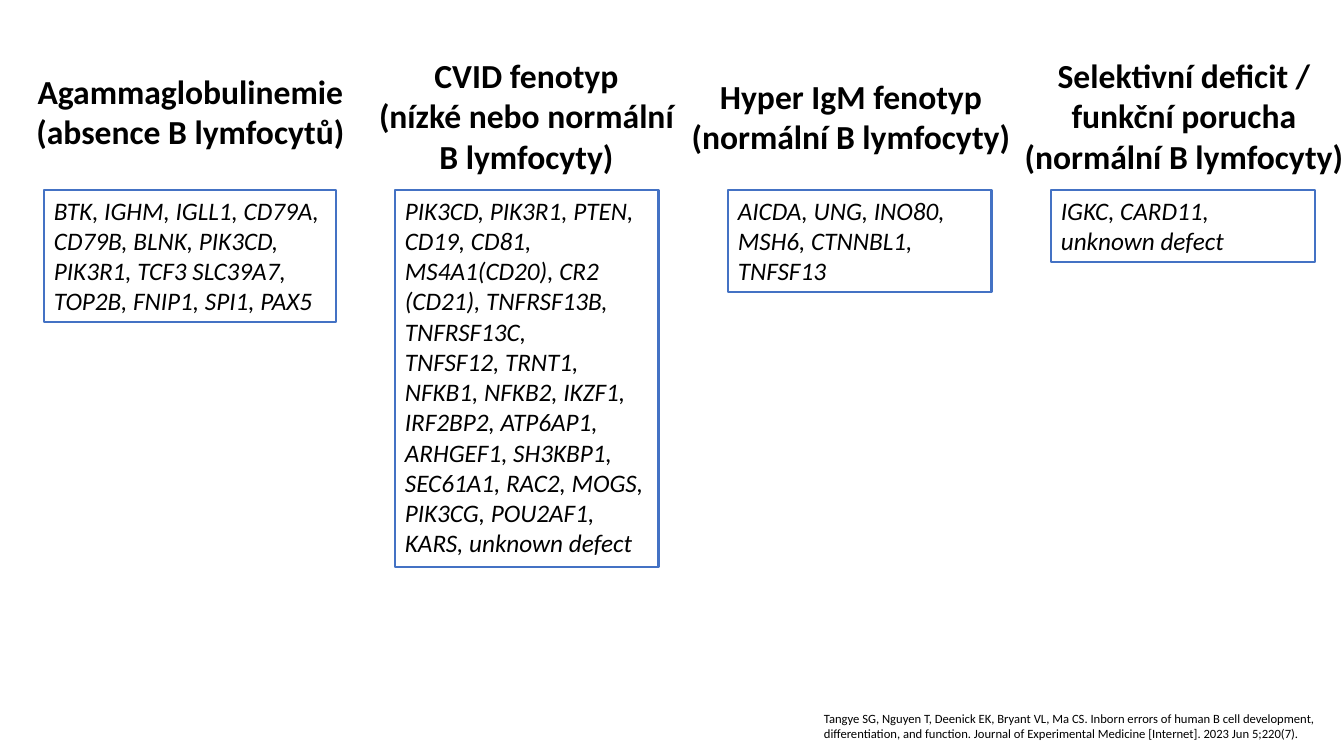
from pptx import Presentation
from pptx.dml.color import RGBColor
from pptx.enum.shapes import MSO_SHAPE as SHAPE
from pptx.enum.text import MSO_ANCHOR as ANCHOR, PP_ALIGN as ALIGN
from pptx.util import Pt

PX = 12192000 / 1344
COLORS = {"text": "000000", "border": "4472C4"}
FONT = "Calibri"
TITLES_TOP = 50
GENES_OFFSET = 140

COLUMNS = [
    {
        "box": (16, TITLES_TOP, 349, 272),
        "title": ["Agammaglobulinemie", "(absence B lymfocytů)"],
        "title_drop": 16, "title_h": 92,
        "genes": ["BTK, IGHM, IGLL1, CD79A, CD79B, BLNK, PIK3CD, PIK3R1, "
                  "TCF3 SLC39A7, TOP2B, FNIP1, SPI1, PAX5"],
        "genes_left": 28, "genes_w": 292,
    },
    {
        "box": (364, TITLES_TOP, 325, 517),
        "title": ["CVID fenotyp", "(nízké nebo normální B lymfocyty)"],
        "title_drop": 0, "title_h": 132,
        "genes": ["PIK3CD, PIK3R1, PTEN, CD19, CD81, MS4A1(CD20), CR2 (CD21), "
                  "TNFRSF13B, TNFRSF13C,",
                  "TNFSF12, TRNT1, NFKB1, NFKB2, IKZF1, IRF2BP2, ATP6AP1, "
                  "ARHGEF1, SH3KBP1, SEC61A1, RAC2, MOGS, PIK3CG, POU2AF1, "
                  "KARS, unknown defect"],
        "genes_left": 31, "genes_w": 264,
    },
    {
        "box": (674, TITLES_TOP, 354, 242),
        "title": ["Hyper IgM fenotyp", "(normální B lymfocyty)"],
        "title_drop": 21, "title_h": 92,
        "genes": ["AICDA, UNG, INO80, MSH6, CTNNBL1, TNFSF13"],
        "genes_left": 54, "genes_w": 264,
    },
    {
        "box": (1007, TITLES_TOP, 354, 212),
        "title": ["Selektivní deficit / funkční porucha", "(normální B lymfocyty)"],
        "title_drop": 0, "title_h": 132,
        "genes": ["IGKC, CARD11, unknown defect"],
        "genes_left": 44, "genes_w": 264,
    },
]
CITATION = ("Tangye SG, Nguyen T, Deenick EK, Bryant VL, Ma CS. Inborn errors of human "
            "B cell development, differentiation, and function. Journal of Experimental "
            "Medicine [Internet]. 2023 Jun 5;220(7).")


def px(*lengths):
    return [round(n * PX) for n in lengths]


def color(name):
    return RGBColor.from_string(COLORS[name])


def write(sp, lines, size, align=ALIGN.LEFT, bold=False, italic=False):
    tf = sp.text_frame
    tf.word_wrap = True
    tf.vertical_anchor = ANCHOR.TOP
    tf.text = "\n".join(lines)
    for p in tf.paragraphs:
        p.alignment = align
        for r in p.runs:
            r.font.name = FONT
            r.font.size = Pt(size)
            r.font.bold = bold
            r.font.italic = italic
            r.font.color.rgb = color("text")


def add_column(s, box, title, title_drop, title_h, genes, genes_left, genes_w):
    x, y, w, h = box
    sp = s.shapes.add_shape(
        SHAPE.RECTANGLE,
        *px(x + genes_left, y + GENES_OFFSET, genes_w, h - GENES_OFFSET))
    sp.shadow.inherit = False
    sp.fill.background()
    sp.line.color.rgb = color("border")
    sp.line.width = Pt(2)
    write(sp, genes, 18, italic=True)

    heading = s.shapes.add_textbox(*px(x, y + title_drop, w, title_h))
    write(heading, title, 24, ALIGN.CENTER, bold=True)


def add_citation(s, box):
    write(s.shapes.add_textbox(*px(*box)), [CITATION], 9)


def main():
    prs = Presentation()
    prs.slide_width, prs.slide_height = px(1344, 756)
    s = prs.slides.add_slide(prs.slide_layouts[6])
    for column in COLUMNS:
        add_column(s, **column)
    add_citation(s, (814, 706, 530, 40))
    prs.save("out.pptx")


if __name__ == "__main__":
    main()
